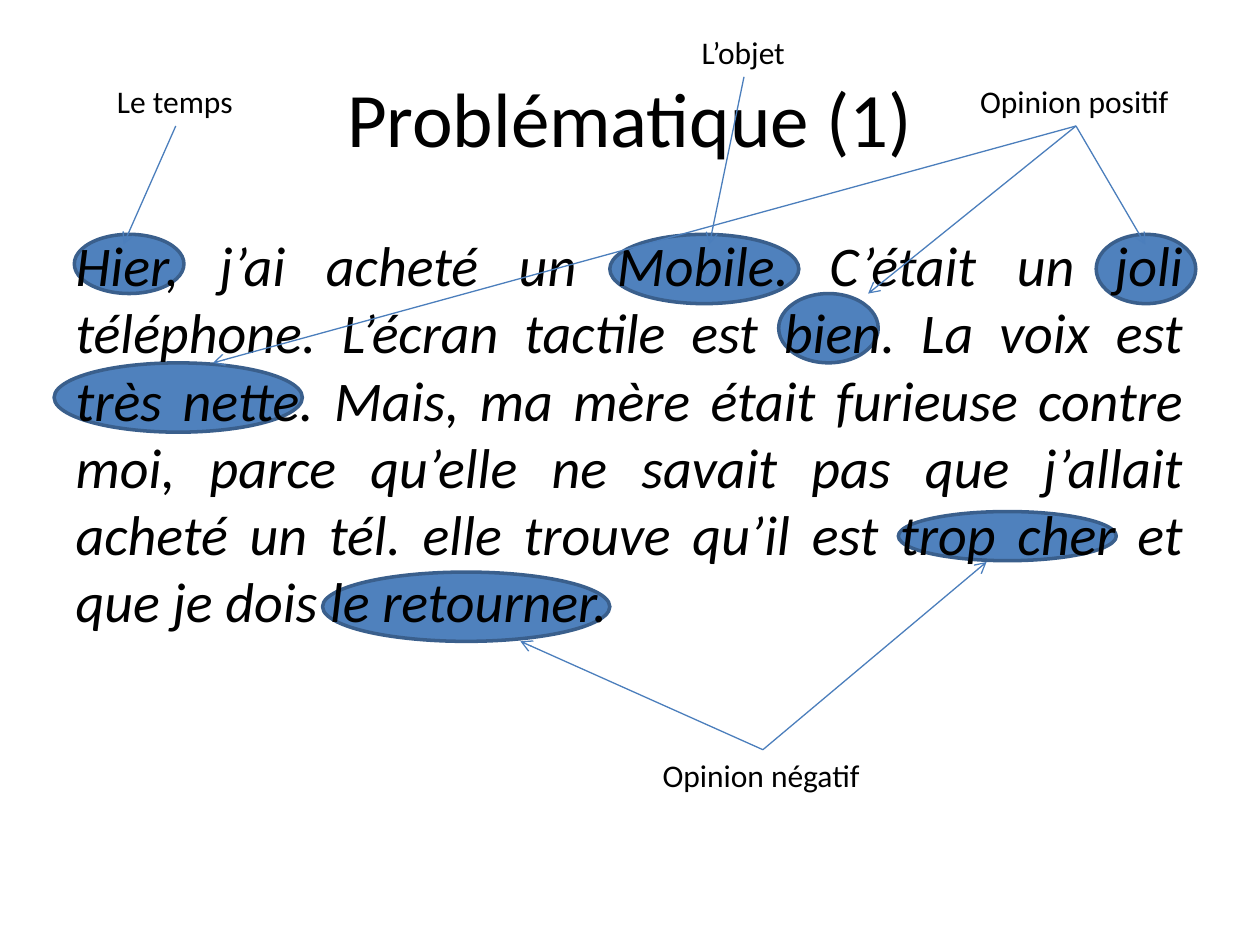
from lxml.etree import SubElement
from pptx import Presentation
from pptx.dml.color import RGBColor
from pptx.enum.shapes import MSO_CONNECTOR, MSO_SHAPE
from pptx.enum.text import MSO_ANCHOR, MSO_AUTO_SIZE, PP_ALIGN
from pptx.oxml.ns import qn
from pptx.util import Inches, Pt

COLORS = {"text": "000000", "fill": "4F81BD", "outline": "3A5F8C", "arrow": "4B7EBC"}
FONT = "Calibri"
TOP, BOTTOM = 0, 2

TITLE = "Problématique (1)"
REVIEW = (
    "Hier, j’ai acheté un Mobile. C’était un joli téléphone. "
    "L’écran tactile est bien. La voix est très nette. "
    "Mais, ma mère était furieuse contre moi, parce qu’elle ne savait pas "
    "que j’allait acheté un tél. elle trouve qu’il est trop cher "
    "et que je dois le retourner."
)
HIGHLIGHTS = [
    (2.56, 4.54, 2.28, 0.55),
    (7.13, 4.06, 1.73, 0.39),
    (0.43, 2.88, 1.97, 0.55),
    (6.18, 2.33, 0.79, 0.55),
    (8.7, 1.86, 0.79, 0.55),
    (4.84, 1.86, 1.5, 0.55),
    (0.59, 1.86, 0.87, 0.47),
]
ANNOTATIONS = [
    ("Le temps", (0.83, 0.6, 1.13, 0.4), BOTTOM, [(0.98, 1.94)]),
    ("L’objet", (5.47, 0.21, 0.87, 0.4), BOTTOM, [(5.63, 1.94)]),
    ("Opinion positif", (7.68, 0.6, 1.72, 0.4), BOTTOM,
     [(9.09, 1.94), (6.89, 2.33), (1.69, 2.88)]),
    ("Opinion négatif", (5.16, 5.95, 1.79, 0.4), TOP, [(4.13, 5.09), (7.83, 4.46)]),
]


def color(name):
    """Return the named colour."""
    return RGBColor.from_string(COLORS[name])


def add_text(paragraph, text, size, alignment, italic=False):
    """Add one formatted run to a paragraph."""
    paragraph.alignment = alignment
    run = paragraph.add_run()
    run.text = text
    run.font.name = FONT
    run.font.size = Pt(size)
    run.font.italic = italic
    run.font.color.rgb = color("text")


def place(shape, box):
    """Move and size a shape to a box in inches."""
    shape.left, shape.top, shape.width, shape.height = map(Inches, box)


def fill_title(title):
    """Place and write the title."""
    place(title, (0.5, 0.3, 9, 1.25))
    title.text_frame.vertical_anchor = MSO_ANCHOR.MIDDLE
    add_text(title.text_frame.paragraphs[0], TITLE, 44, PP_ALIGN.CENTER)


def fill_body(body):
    """Place and write the justified review without a bullet."""
    place(body, (0.5, 1.78, 9, 3.78))
    paragraph = body.text_frame.paragraphs[0]
    add_text(paragraph, REVIEW, 32, PP_ALIGN.JUSTIFY, italic=True)
    properties = paragraph._p.get_or_add_pPr()
    properties.set("marL", "0")
    properties.set("indent", "0")
    SubElement(properties, qn("a:buNone"))


def add_highlight(slide, box):
    """Add an ellipse behind the title and body."""
    ellipse = slide.shapes.add_shape(MSO_SHAPE.OVAL, *map(Inches, box))
    ellipse.shadow.inherit = False
    ellipse.fill.solid()
    ellipse.fill.fore_color.rgb = color("fill")
    ellipse.line.color.rgb = color("outline")
    ellipse.line.width = Pt(2)
    slide.shapes.title.element.addprevious(ellipse.element)


def add_label(slide, text, box):
    """Add an unwrapped annotation label."""
    label = slide.shapes.add_textbox(*map(Inches, box))
    label.text_frame.word_wrap = False
    label.text_frame.auto_size = MSO_AUTO_SIZE.SHAPE_TO_FIT_TEXT
    add_text(label.text_frame.paragraphs[0], text, 18, PP_ALIGN.LEFT)
    return label


def add_arrow(slide, label, site, target):
    """Add an arrow from a side of a label to a target point."""
    end_x, end_y = map(Inches, target)
    connector = slide.shapes.add_connector(
        MSO_CONNECTOR.STRAIGHT, label.left, label.top, end_x, end_y
    )
    connector.begin_connect(label, site)
    connector.line.color.rgb = color("arrow")
    connector.line.width = Pt(0.75)
    SubElement(connector.line._get_or_add_ln(), qn("a:tailEnd"), type="arrow")
    SubElement(connector.element.spPr, qn("a:effectLst"))


def main():
    """Build and save the annotated review slide."""
    presentation = Presentation()
    presentation.slide_width = Inches(10)
    presentation.slide_height = Inches(7.5)
    slide = presentation.slides.add_slide(presentation.slide_layouts[1])
    fill_title(slide.shapes.title)
    fill_body(slide.placeholders[1])
    for box in HIGHLIGHTS:
        add_highlight(slide, box)
    for text, box, site, targets in ANNOTATIONS:
        label = add_label(slide, text, box)
        for target in targets:
            add_arrow(slide, label, site, target)
    presentation.save("out.pptx")


if __name__ == "__main__":
    main()
